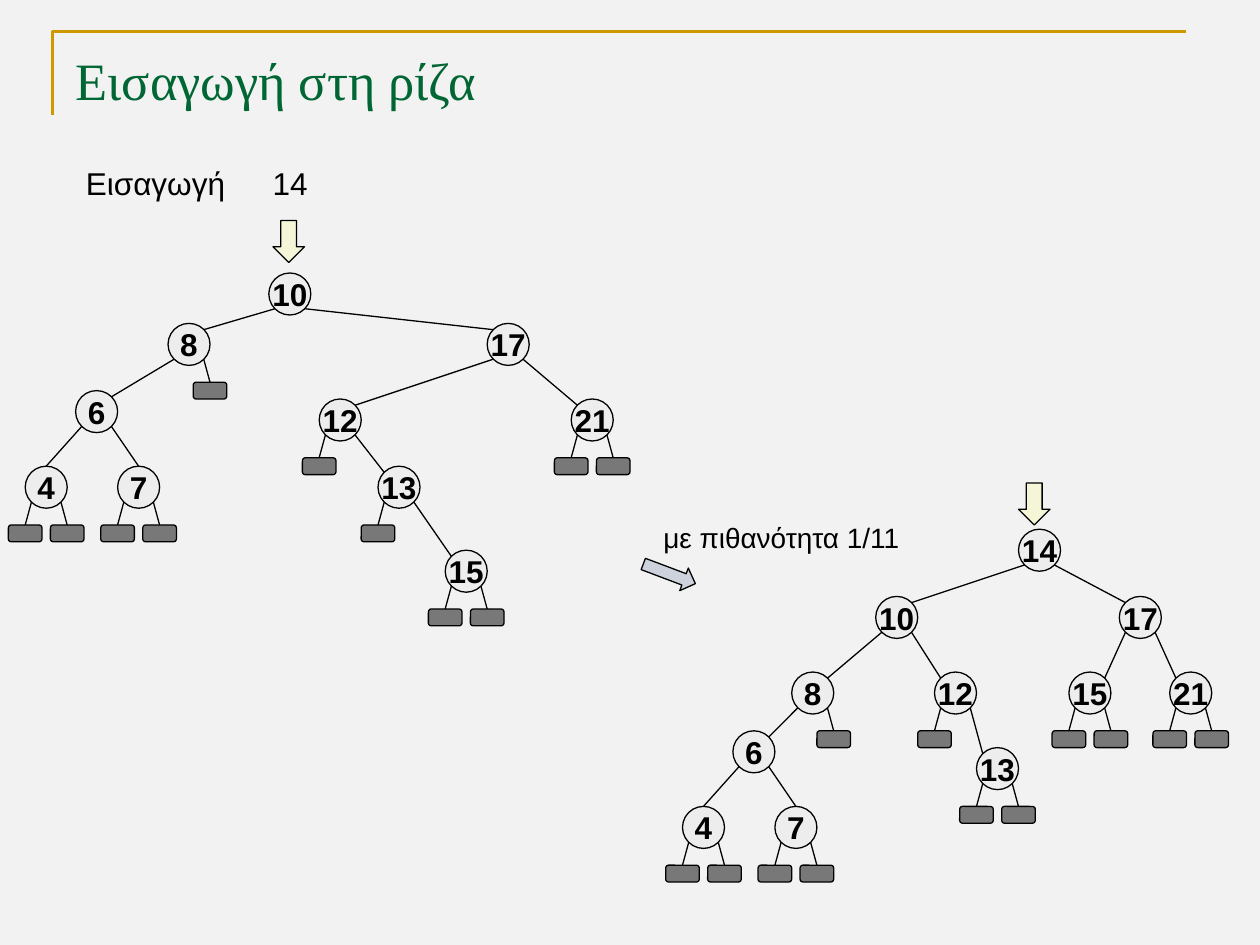
from dataclasses import dataclass
from typing import Optional

from lxml import etree
from pptx import Presentation
from pptx.dml.color import RGBColor
from pptx.enum.shapes import MSO_CONNECTOR, MSO_SHAPE
from pptx.enum.text import MSO_ANCHOR, MSO_AUTO_SIZE, PP_ALIGN
from pptx.oxml.ns import qn
from pptx.util import Pt

PX = 7620
STRAIGHT = MSO_CONNECTOR.STRAIGHT
ELLIPSE = MSO_SHAPE.OVAL
LEAF = MSO_SHAPE.ROUNDED_RECTANGLE
DOWN_ARROW = MSO_SHAPE.DOWN_ARROW
RIGHT_ARROW = MSO_SHAPE.RIGHT_ARROW
TOP, MIDDLE = MSO_ANCHOR.TOP, MSO_ANCHOR.MIDDLE
LEFT, CENTER = PP_ALIGN.LEFT, PP_ALIGN.CENTER
NO_AUTOSIZE = MSO_AUTO_SIZE.NONE

DIAMETER = 40
NEAR, FAR = 6, 34
LEAF_WIDTH, LEAF_HEIGHT, LEAF_DROP = 32, 16, 56


@dataclass
class Node:
    key: int
    x: int
    y: int
    left: Optional["Node"] = None
    right: Optional["Node"] = None
    joined_at_top: bool = False


def px(*lengths):
    return [length * PX for length in lengths]


def color(hex_value):
    return RGBColor.from_string(hex_value)


def outline(line, hex_value="000000", width=0.75):
    line.color.rgb = color(hex_value)
    line.width = Pt(width)


def write(frame, text, size, font="Arial", hex_value="000000", bold=False, align=LEFT):
    frame.text = text
    paragraph = frame.paragraphs[0]
    paragraph.alignment = align
    paragraph.font.size = Pt(size)
    paragraph.font.name = font
    paragraph.font.bold = bold
    paragraph.font.color.rgb = color(hex_value)


def add_tinted_shape(shapes, preset, box, hex_value, opacity):
    shape = shapes.add_shape(preset, *px(*box))
    shape.shadow.inherit = False
    shape.fill.solid()
    shape.fill.fore_color.rgb = color(hex_value)
    tint = shape.fill._xPr.find(qn("a:solidFill"))[0]
    etree.SubElement(tint, qn("a:alpha"), val=str(opacity * 1000))
    outline(shape.line)
    return shape


def add_edge(shapes, start, end):
    edge = shapes.add_connector(STRAIGHT, *px(*start, *end))
    outline(edge.line)
    etree.SubElement(edge._element.spPr, qn("a:effectLst"))
    return edge


def add_leaf(shapes, start, x, y):
    box = (x - LEAF_WIDTH // 2, y, LEAF_WIDTH, LEAF_HEIGHT)
    leaf = add_tinted_shape(shapes, LEAF, box, "000000", 50)
    add_edge(shapes, start, (x, y)).end_connect(leaf, 0)


def add_tree(shapes, node):
    circle = add_tinted_shape(
        shapes, ELLIPSE, (node.x, node.y, DIAMETER, DIAMETER), "EAEAEA", 60
    )
    frame = circle.text_frame
    frame.word_wrap = False
    frame.vertical_anchor = MIDDLE
    write(frame, str(node.key), 18, bold=True, align=CENTER)

    sides = ((node.left, NEAR, FAR, 0), (node.right, FAR, NEAR, DIAMETER))
    for child, exit_x, entry_x, leaf_x in sides:
        start = (node.x + exit_x, node.y + FAR)
        if child is None:
            add_leaf(shapes, start, node.x + leaf_x, node.y + LEAF_DROP)
            continue
        child_circle = add_tree(shapes, child)
        edge = add_edge(shapes, start, (child.x + entry_x, child.y + NEAR))
        if child.joined_at_top:
            edge.end_connect(child_circle, 0)
    return circle


def add_label(slide, text, box, size):
    frame = slide.shapes.add_textbox(*px(*box)).text_frame
    frame.word_wrap = False
    write(frame, text, size)


def add_title(slide, text):
    title = slide.shapes.title
    title.left, title.top, title.width, title.height = px(60, 36, 1080, 64)
    frame = title.text_frame
    frame.auto_size = NO_AUTOSIZE
    frame.vertical_anchor = TOP
    frame.margin_top = 10 * PX
    write(frame, text, 30, "Times New Roman", "006633")


def add_title_frame(slide):
    builder = slide.shapes.build_freeform(50, 110, scale=PX)
    builder.add_line_segments([(50, 30), (1130, 30)], close=False)
    corner = builder.convert_to_shape()
    corner.shadow.inherit = False
    corner.fill.background()
    outline(corner.line, "CC9900", 1.5)


def small_subtree(x, y):
    return Node(
        6, x, y,
        Node(4, x - 48, y + 72, joined_at_top=True),
        Node(7, x + 40, y + 72, joined_at_top=True),
    )


def tree_before():
    chain = Node(12, 304, 380, right=Node(13, 360, 444, right=Node(15, 424, 524)))
    return Node(
        10, 256, 260,
        Node(8, 160, 308, small_subtree(72, 372)),
        Node(17, 464, 308, chain, Node(21, 544, 380)),
    )


def tree_after():
    smaller = Node(
        10, 834, 568,
        Node(8, 754, 640, small_subtree(698, 696)),
        Node(12, 890, 640, right=Node(13, 930, 712)),
    )
    larger = Node(17, 1066, 568, Node(15, 1018, 640), Node(21, 1114, 640))
    return Node(14, 970, 504, smaller, larger)


def main():
    presentation = Presentation()
    presentation.slide_width, presentation.slide_height = px(1200, 900)
    slide = presentation.slides.add_slide(presentation.slide_layouts[5])
    slide.background.fill.solid()
    slide.background.fill.fore_color.rgb = color("F2F2F2")

    add_title_frame(slide)
    add_title(slide, "Εισαγωγή στη ρίζα")
    add_label(slide, "Εισαγωγή", (70, 150, 170, 60), 18)
    add_label(slide, "14", (248, 150, 58, 48), 18)
    add_label(slide, "με πιθανότητα 1/11", (620, 490, 252, 44), 16)

    for root in (tree_before(), tree_after()):
        add_tree(slide.shapes.add_group_shape().shapes, root)

    for x, y in ((260, 210), (970, 460)):
        add_tinted_shape(slide.shapes, DOWN_ARROW, (x, y, 30, 40), "FFFF99", 30)
    step = add_tinted_shape(slide.shapes, RIGHT_ARROW, (611, 535, 53, 23), "002060", 15)
    step.rotation = 20.7

    presentation.save("out.pptx")


if __name__ == "__main__":
    main()
